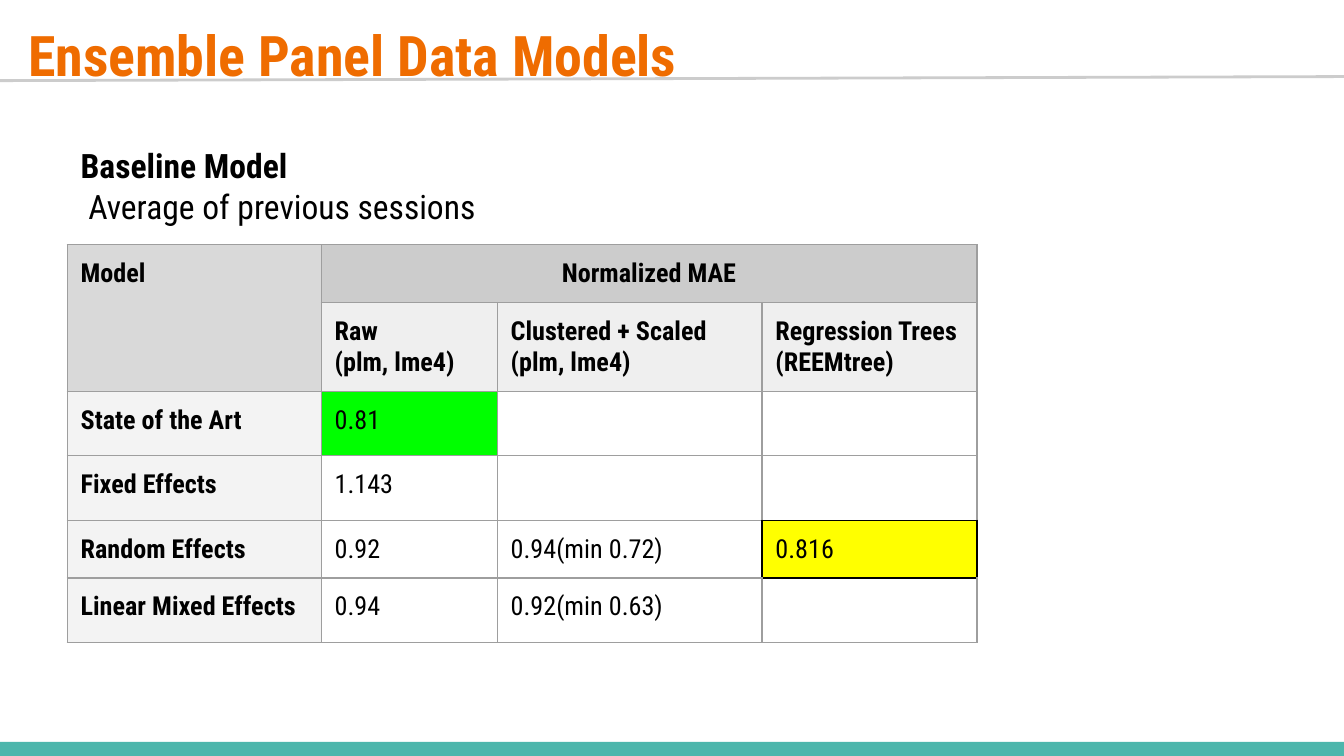
import pptx
import pptx.util
import pptx.dml.color
import pptx.enum.shapes
import pptx.enum.text
import pptx.oxml
import pptx.oxml.ns
from lxml import etree

Inches = pptx.util.Inches
Pt = pptx.util.Pt
RGBColor = pptx.dml.color.RGBColor
Align = pptx.enum.text.PP_ALIGN

FONT = "Roboto Condensed"
BLACK = RGBColor(0x00, 0x00, 0x00)
ORANGE = RGBColor(0xEF, 0x6C, 0x00)
TEAL = RGBColor(0x4D, 0xB6, 0xAC)
RULE = RGBColor(0xCC, 0xCC, 0xCC)
EDGE = RGBColor(0x9E, 0x9E, 0x9E)
CORNER = RGBColor(0xD9, 0xD9, 0xD9)
HEAD = RGBColor(0xCC, 0xCC, 0xCC)
SUBHEAD = RGBColor(0xEF, 0xEF, 0xEF)
LABEL = RGBColor(0xF3, 0xF3, 0xF3)
GREEN = RGBColor(0x00, 0xFF, 0x00)
YELLOW = RGBColor(0xFF, 0xFF, 0x00)

ROWS = [
    ["Model", "Normalized MAE", "", ""],
    ["", "Raw\n(plm, lme4)", "Clustered + Scaled\n(plm, lme4)",
     "Regression Trees\n(REEMtree)"],
    ["State of the Art", "0.81", "", ""],
    ["Fixed Effects", "1.143", "", ""],
    ["Random Effects", "0.92", "0.94(min 0.72)", "0.816"],
    ["Linear Mixed Effects", "0.94", "0.92(min 0.63)", ""],
]
WIDTHS = [1.89, 1.31, 1.97, 1.6]
HEIGHTS = [0.43, 0.66, 0.48, 0.48, 0.43, 0.48]
FILLS = {(0, 0): CORNER, (0, 1): HEAD, (2, 1): GREEN, (4, 3): YELLOW}
TREE = (4, 3)
SIDES = {"L": (0, -1), "R": (0, 1), "T": (-1, 0), "B": (1, 0)}


def write(frame, text, size=14, color=BLACK, bold=False, align=Align.LEFT):
    """Add each line of text to the frame as a formatted paragraph."""
    for line in text.split("\n"):
        para = frame.paragraphs[0]
        if para.runs:
            para = frame.add_paragraph()
        para.alignment = align
        para.space_before = Pt(0)
        run = para.add_run()
        run.text = line
        run.font.name = FONT
        run.font.size = Pt(size)
        run.font.bold = bold
        run.font.color.rgb = color


class Deck:
    """Hold the style and the current slide."""

    def __init__(self, width):
        """Open a wide deck with one titled slide."""
        self.deck = pptx.Presentation()
        self.deck.slide_width = Inches(width)
        self.deck.slide_height = Inches(width * 9 / 16)
        self.slide = self.deck.slides.add_slide(self.deck.slide_layouts[1])

    def holder(self, index, box):
        """Place a template placeholder and return its text frame."""
        shape = self.slide.placeholders[index]
        shape.left, shape.top, shape.width, shape.height = map(Inches, box)
        frame = shape.text_frame
        frame.word_wrap = True
        frame.auto_size = pptx.enum.text.MSO_AUTO_SIZE.NONE
        frame.vertical_anchor = pptx.enum.text.MSO_ANCHOR.TOP
        frame.margin_left = frame.margin_right = Inches(0.1)
        frame.margin_top = frame.margin_bottom = Inches(0.1)
        return frame

    def title(self, text, box):
        """Fill the title placeholder."""
        write(self.holder(0, box), text, size=30, color=ORANGE, bold=True)

    def body(self, head, text, box):
        """Fill the body placeholder with a bold head and a plain line."""
        frame = self.holder(1, box)
        write(frame, head, size=18, bold=True)
        write(frame, text, size=18)
        for para in frame.paragraphs:
            props = para._p.get_or_add_pPr()
            props.set("marL", "0")
            props.set("indent", "0")
            etree.SubElement(props, pptx.oxml.ns.qn("a:buNone"))

    def bar(self, box, color):
        """Draw a plain filled bar."""
        kind = pptx.enum.shapes.MSO_SHAPE.RECTANGLE
        shape = self.slide.shapes.add_shape(kind, *map(Inches, box))
        shape.shadow.inherit = False
        shape.fill.solid()
        shape.fill.fore_color.rgb = color
        shape.line.fill.background()

    def line(self, ends, color, width):
        """Draw a straight line."""
        kind = pptx.enum.shapes.MSO_CONNECTOR.STRAIGHT
        line = self.slide.shapes.add_connector(kind, *map(Inches, ends))
        line.line.color.rgb = color
        line.line.width = Pt(width)
        props = line._element.spPr
        etree.SubElement(props, pptx.oxml.ns.qn("a:effectLst"))

    def border(self, cell, spot):
        """Outline a cell, in black where it meets the tree score."""
        props = cell._tc.get_or_add_tcPr()
        for place, (side, step) in enumerate(SIDES.items()):
            near = (spot[0] + step[0], spot[1] + step[1])
            color = BLACK if TREE in (spot, near) else EDGE
            edge = pptx.oxml.parse_xml(
                f'<a:ln{side} {pptx.oxml.ns.nsdecls("a")} w="{Pt(0.75)}">'
                f'<a:solidFill><a:srgbClr val="{color}"/></a:solidFill>'
                f'</a:ln{side}>')
            props.insert(place, edge)

    def cell(self, cell, text, spot):
        """Fill, outline and write one cell."""
        row, col = spot
        cell.margin_left = cell.margin_right = Inches(0.1)
        cell.margin_top = cell.margin_bottom = Inches(0.1)
        base = SUBHEAD if row == 1 else LABEL if col == 0 else None
        color = FILLS.get(spot, base)
        if color is None:
            cell.fill.background()
        else:
            cell.fill.solid()
            cell.fill.fore_color.rgb = color
        self.border(cell, spot)
        if text:
            align = Align.CENTER if spot == (0, 1) else Align.LEFT
            write(cell.text_frame, text, bold=row < 2 or col == 0, align=align)
        else:
            para = cell.text_frame.paragraphs[0]._p
            tag = pptx.oxml.ns.qn("a:endParaRPr")
            etree.SubElement(para, tag, sz="1400")

    def table(self, left, top):
        """Build the table of model errors."""
        box = map(Inches, (left, top, sum(WIDTHS), sum(HEIGHTS)))
        grid = self.slide.shapes.add_table(len(ROWS), len(WIDTHS), *box).table
        grid.first_row = grid.horz_banding = False
        for col, width in zip(grid.columns, WIDTHS):
            col.width = Inches(width)
        for row, height in zip(grid.rows, HEIGHTS):
            row.height = Inches(height)
        grid.cell(0, 0).merge(grid.cell(1, 0))
        grid.cell(0, 1).merge(grid.cell(0, 3))
        for row, texts in enumerate(ROWS):
            for col, text in enumerate(texts):
                self.cell(grid.cell(row, col), text, (row, col))


def main():
    """Build and save the slide."""
    deck = Deck(10)
    deck.bar((0, 5.52, 10, 0.11), TEAL)
    deck.title("Ensemble Panel Data Models", (0.11, 0.05, 9.32, 0.51))
    deck.body("Baseline Model", " Average of previous sessions",
              (0.5, 0.98, 4.39, 0.84))
    deck.table(0.5, 1.82)
    deck.line((0, 0.6, 10.01, 0.57), RULE, 1.5)
    deck.deck.save("out.pptx")


if __name__ == "__main__":
    main()
